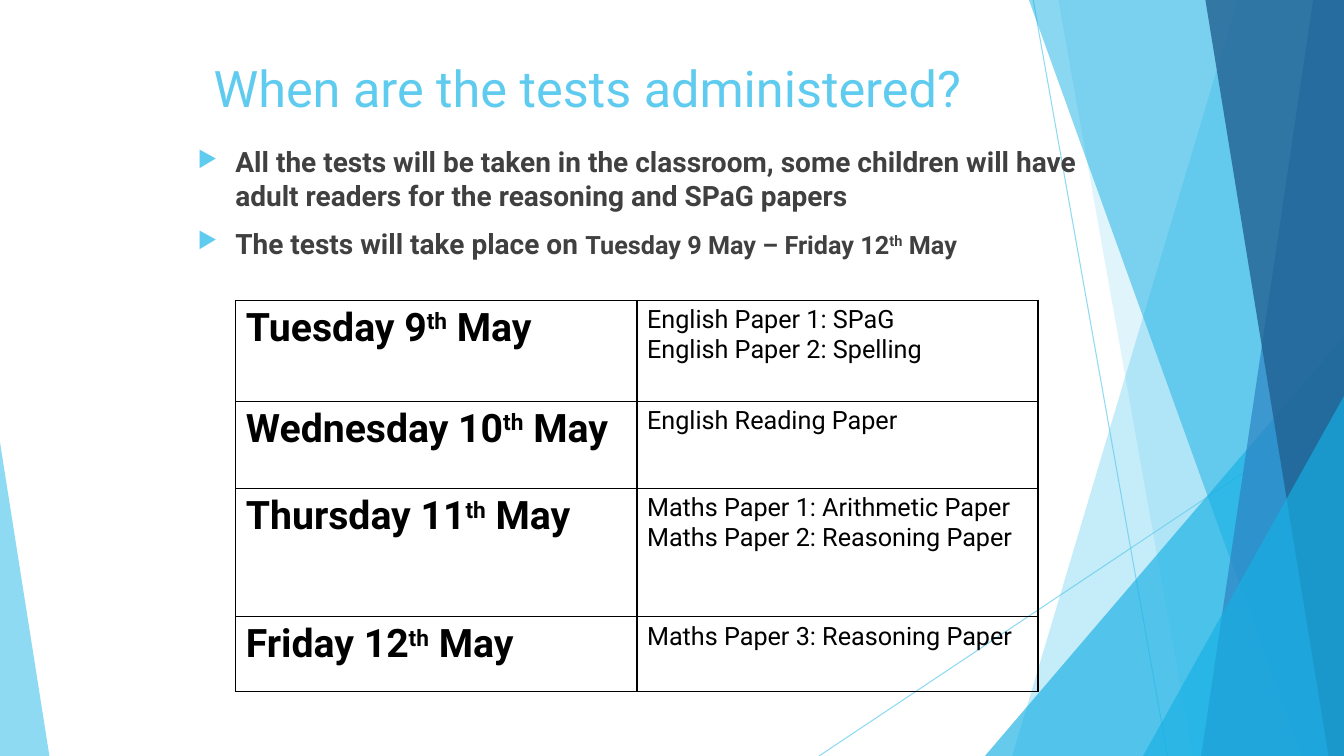
from dataclasses import dataclass

from lxml.etree import SubElement
from pptx import Presentation
from pptx.dml.color import RGBColor
from pptx.enum.shapes import MSO_CONNECTOR, MSO_SHAPE
from pptx.oxml.ns import qn
from pptx.util import Pt

FONT = "Roboto"
SKY = RGBColor(0x5F, 0xCB, 0xEF)
CYAN = RGBColor(0x17, 0xB0, 0xE4)
BLUE = RGBColor(0x2E, 0x83, 0xC3)
NAVY = RGBColor(0x22, 0x62, 0x92)
GREY = RGBColor(0x40, 0x40, 0x40)
BLACK = RGBColor(0, 0, 0)
WIDTH, HEIGHT = 960, 540


@dataclass
class Ray:
    start: tuple[float, float]
    end: tuple[float, float]


@dataclass
class Band:
    """Full-height facet: slanted left edge, right edge on the slide border."""
    top_x: float
    bottom_x: float
    color: RGBColor
    opacity: int


@dataclass
class Corner:
    """Triangle standing on the bottom edge; apex 0 is left, 1 is right."""
    left: float
    top: float
    width: float
    apex: int
    color: RGBColor
    opacity: int


@dataclass
class Piece:
    text: str
    size: float | None = None
    raised: bool = False


@dataclass
class TestDay:
    date: str
    papers: str
    height: float


RAYS = [Ray((738, 0), (834, HEIGHT)), Ray((WIDTH, 290), (585, HEIGHT))]
FACETS = [
    Band(884, 723, SKY, 36),
    Band(756, 852, SKY, 20),
    Corner(703.5, 240, 256.5, 1, CYAN, 66),
    Band(735, 929.5, CYAN, 50),
    Band(938, 858, BLUE, 70),
    Band(861, 949, NAVY, 80),
    Corner(816.5, 283, 143.5, 1, CYAN, 66),
    Corner(0, 316, 35.3, 0, SKY, 70),
]
BULLETS = [
    [Piece("All the tests will be taken in the classroom, some children will have "
           "adult readers for the reasoning and SPaG papers", 20)],
    [Piece("The tests will take place on ", 20), Piece("Tuesday 9 May – Friday 12", 18),
     Piece("th", 18, True), Piece(" May", 18)],
]
TIMETABLE = [
    TestDay("Tuesday 9", "English Paper 1: SPaG\nEnglish Paper 2: Spelling", 72),
    TestDay("Wednesday 10", "English Reading Paper", 62.5),
    TestDay("Thursday 11",
            "Maths Paper 1: Arithmetic Paper\nMaths Paper 2: Reasoning Paper", 91.5),
    TestDay("Friday 12", "Maths Paper 3: Reasoning Paper", 53.5),
]


def set_opacity(fill_parent, percent: int) -> None:
    for color in fill_parent.iter(qn("a:srgbClr")):
        SubElement(color, qn("a:alpha"), val=str(percent * 1000))


def draw_ray(slide, ray: Ray) -> None:
    line = slide.shapes.add_connector(
        MSO_CONNECTOR.STRAIGHT, *map(Pt, ray.start + ray.end))
    line.line.color.rgb = SKY
    line.line.width = Pt(0.75)
    properties = line._element.spPr
    set_opacity(properties, 70)
    SubElement(properties, qn("a:effectLst"))


def draw_facet(slide, facet: Band | Corner) -> None:
    if isinstance(facet, Band):
        outline = slide.shapes.build_freeform(Pt(facet.top_x), 0)
        outline.add_line_segments([(Pt(x), Pt(y)) for x, y in (
            (WIDTH, 0), (WIDTH, HEIGHT), (facet.bottom_x, HEIGHT))])
        shape = outline.convert_to_shape()
    else:
        shape = slide.shapes.add_shape(
            MSO_SHAPE.ISOSCELES_TRIANGLE, Pt(facet.left), Pt(facet.top),
            Pt(facet.width), Pt(HEIGHT - facet.top))
        shape.adjustments[0] = facet.apex
    shape.shadow.inherit = False
    shape.line.fill.background()
    shape.fill.solid()
    shape.fill.fore_color.rgb = facet.color
    set_opacity(shape._element.spPr, facet.opacity)


def set_font(paragraph, color: RGBColor, bold: bool, size: float | None = None) -> None:
    font = paragraph.font
    font.name, font.bold, font.color.rgb = FONT, bold, color
    if size:
        font.size = Pt(size)


def add_pieces(paragraph, pieces: list[Piece]) -> None:
    for piece in pieces:
        run = paragraph.add_run()
        run.text = piece.text
        if piece.size:
            run.font.size = Pt(piece.size)
        if piece.raised:
            run._r.get_or_add_rPr().set("baseline", "30000")


def add_text_frame(slide, left: float, top: float, width: float, height: float):
    frame = slide.shapes.add_textbox(*map(Pt, (left, top, width, height))).text_frame
    frame.word_wrap = True
    return frame


def add_bullet(paragraph) -> None:
    paragraph.space_before = Pt(10)
    properties = paragraph._p.get_or_add_pPr()
    properties.set("marL", str(Pt(27)))
    properties.set("indent", str(Pt(-27)))
    color = SubElement(properties, qn("a:buClr"))
    SubElement(color, qn("a:srgbClr"), val=str(SKY))
    SubElement(properties, qn("a:buSzPct"), val="80000")
    SubElement(properties, qn("a:buChar"), char="▶")


def style_cell(cell) -> None:
    properties = cell._tc.get_or_add_tcPr()
    for side in ("lnL", "lnR", "lnT", "lnB"):
        border = SubElement(properties, qn(f"a:{side}"), w=str(Pt(1)))
        fill = SubElement(border, qn("a:solidFill"))
        SubElement(fill, qn("a:srgbClr"), val=str(BLACK))
    cell.fill.background()


def draw_timetable(slide) -> None:
    table = slide.shapes.add_table(
        len(TIMETABLE), 2, Pt(168.5), Pt(214.5), Pt(573),
        Pt(sum(day.height for day in TIMETABLE))).table
    table.first_row = table.horz_banding = False
    for row, day in zip(table.rows, TIMETABLE):
        row.height = Pt(day.height)
        for cell in row.cells:
            style_cell(cell)
        date, papers = (cell.text_frame.paragraphs[0] for cell in row.cells)
        add_pieces(date, [Piece(day.date), Piece("th", raised=True), Piece(" May")])
        set_font(date, BLACK, True, 28)
        papers.text = day.papers
        set_font(papers, BLACK, False, 18)


def main() -> None:
    deck = Presentation()
    deck.slide_width, deck.slide_height = Pt(WIDTH), Pt(HEIGHT)
    slide = deck.slides.add_slide(deck.slide_layouts[6])

    # Faceted backdrop
    for ray in RAYS:
        draw_ray(slide, ray)
    for facet in FACETS:
        draw_facet(slide, facet)

    # Title
    title = add_text_frame(slide, 145.5, 37.5, 673, 72).paragraphs[0]
    title.text = "When are the tests administered?"
    set_font(title, SKY, False, 36)

    # Bullets
    body = add_text_frame(slide, 134, 100, 674.5, 408)
    for index, pieces in enumerate(BULLETS):
        paragraph = body.add_paragraph() if index else body.paragraphs[0]
        add_bullet(paragraph)
        add_pieces(paragraph, pieces)
        set_font(paragraph, GREY, True)

    # Timetable
    draw_timetable(slide)

    deck.save("out.pptx")


if __name__ == "__main__":
    main()
